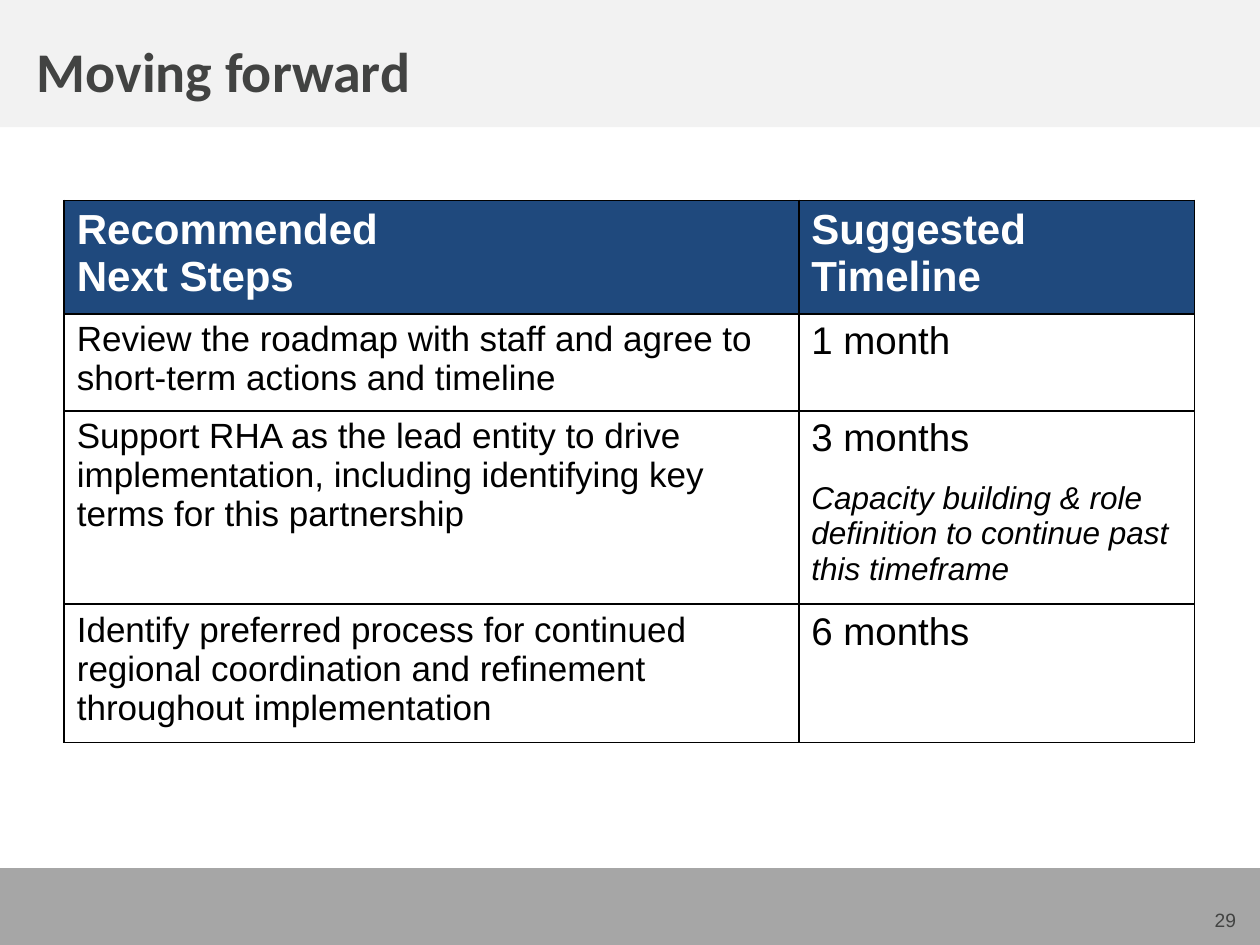
"""Build the "Moving forward" slide with its table of next steps."""
from lxml import etree
from pptx import Presentation
from pptx.dml.color import RGBColor
from pptx.enum.shapes import MSO_SHAPE
from pptx.enum.text import MSO_ANCHOR, PP_ALIGN
from pptx.oxml.ns import qn
from pptx.util import Inches, Pt

RECTANGLE = MSO_SHAPE.RECTANGLE
TOP, BOTTOM = MSO_ANCHOR.TOP, MSO_ANCHOR.BOTTOM
LEFT, RIGHT = PP_ALIGN.LEFT, PP_ALIGN.RIGHT

COLORS = {
    "footer": "A6A6A6", "banner": "F2F2F2", "title": "424342",
    "header": "1F497D", "white": "FFFFFF", "black": "000000",
}
BANDS = [("footer", 6.89, 0.61), ("banner", 0, 1.01)]
LABELS = [
    ("29", (7.48, 6.99, 2.33, 0.4), "Arial", 11, False, RIGHT, BOTTOM),
    ("Moving forward", (0.29, 0.29, 8.55, 0.54), "Calibri", 32, True, LEFT, TOP),
]
STEPS = [
    ("Recommended\nNext Steps", "Suggested Timeline"),
    ("Review the roadmap with staff and agree to short-term actions and timeline",
     "1 month"),
    ("Support RHA as the lead entity to drive implementation, including "
     "identifying key terms for this partnership",
     "3 months\nCapacity building & role definition to continue past this timeframe"),
    ("Identify preferred process for continued regional coordination and "
     "refinement throughout implementation", "6 months"),
]
TABLE_LEFT, TABLE_TOP = 0.51, 1.59
COLUMN_WIDTHS = [5.83, 3.14]
ROW_HEIGHTS = [0.9, 0.77, 1.53, 1.1]
HEADER_SIZE, NOTE_SIZE = 24, 18
BODY_SIZES = [20, 22]


def color(name):
    return RGBColor.from_string(COLORS[name])


def style(paragraph, font_name, size, color_name, bold=False, italic=False):
    for run in paragraph.runs:
        font = run.font
        font.name, font.size = font_name, Pt(size)
        font.bold, font.italic = bold, italic
        font.color.rgb = color(color_name)


def add_band(slide, fill, top, height):
    band = slide.shapes.add_shape(
        RECTANGLE, 0, Inches(top), Inches(10), Inches(height))
    band.shadow.inherit = False
    band.fill.solid()
    band.fill.fore_color.rgb = color(fill)
    band.line.fill.background()


def add_label(slide, text, box, font_name, size, bold, alignment, anchor):
    text_frame = slide.shapes.add_textbox(*map(Inches, box)).text_frame
    text_frame.word_wrap = True
    text_frame.margin_left = text_frame.margin_right = 0
    text_frame.margin_top = text_frame.margin_bottom = 0
    text_frame.vertical_anchor = anchor
    text_frame.text = text
    paragraph = text_frame.paragraphs[0]
    paragraph.alignment = alignment
    style(paragraph, font_name, size, "title", bold)


def add_borders(cell):
    properties = cell._tc.get_or_add_tcPr()
    for position, side in enumerate(("a:lnL", "a:lnR", "a:lnT", "a:lnB")):
        line = etree.Element(qn(side), w=str(Pt(1)))
        fill = etree.SubElement(line, qn("a:solidFill"))
        etree.SubElement(fill, qn("a:srgbClr"), val=COLORS["black"])
        properties.insert(position, line)


def fill_cell(cell, text, row, column):
    is_header = row == 0
    cell.fill.solid()
    cell.fill.fore_color.rgb = color("header" if is_header else "white")
    add_borders(cell)
    cell.text_frame.text = text
    paragraphs = cell.text_frame.paragraphs
    for position, paragraph in enumerate(paragraphs):
        if is_header:
            style(paragraph, "Arial", HEADER_SIZE, "white", bold=True)
        elif position:
            style(paragraph, "Arial", NOTE_SIZE, "black", italic=True)
        else:
            style(paragraph, "Arial", BODY_SIZES[column], "black")
            if len(paragraphs) > 1:
                paragraph.space_after = Pt(12)


def add_steps_table(slide):
    table = slide.shapes.add_table(
        len(STEPS), len(COLUMN_WIDTHS), Inches(TABLE_LEFT), Inches(TABLE_TOP),
        Inches(sum(COLUMN_WIDTHS)), Inches(sum(ROW_HEIGHTS))).table
    table.horz_banding = False
    for column, width in zip(table.columns, COLUMN_WIDTHS):
        column.width = Inches(width)
    for row, height in zip(table.rows, ROW_HEIGHTS):
        row.height = Inches(height)
    for row, texts in enumerate(STEPS):
        for column, text in enumerate(texts):
            fill_cell(table.cell(row, column), text, row, column)


def main():
    presentation = Presentation()
    presentation.slide_width, presentation.slide_height = Inches(10), Inches(7.5)
    slide = presentation.slides.add_slide(presentation.slide_layouts[6])
    for band in BANDS:
        add_band(slide, *band)
    for label in LABELS:
        add_label(slide, *label)
    add_steps_table(slide)
    presentation.save("out.pptx")


if __name__ == "__main__":
    main()
